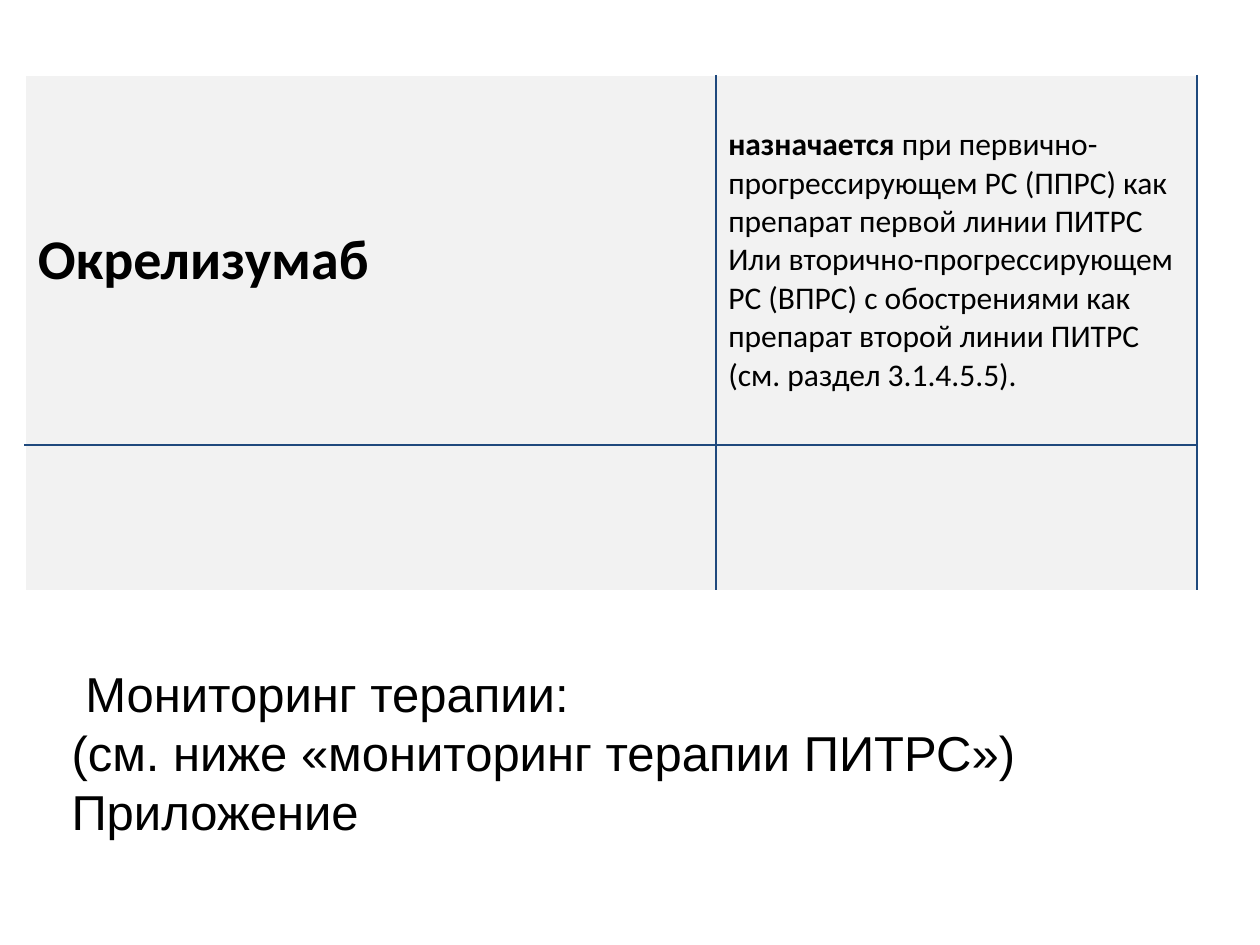
from dataclasses import dataclass, field
from typing import Any

from lxml.etree import SubElement
from pptx import Presentation
from pptx.dml.color import RGBColor as RGB
from pptx.enum.text import MSO_ANCHOR as Anchor, MSO_AUTO_SIZE as AutoSize
from pptx.oxml.ns import qn
from pptx.util import Inches, Pt

COLORS = {"text": "000000", "cell": "F2F2F2", "outer": "FFFFFF", "rule": "1F497D"}
WIDTHS = {"outer": 1, "rule": 1.5}


def add_text(paragraph, text, font="Calibri", size=18, bold=False, color="text"):
    """Add one formatted run, turning each newline into a line break."""
    for number, line in enumerate(text.split("\n")):
        if number:
            paragraph.add_line_break()
        run = paragraph.add_run()
        run.text = line
        run.font.name, run.font.size, run.font.bold = font, Pt(size), bold
        run.font.color.rgb = RGB.from_string(COLORS[color])


@dataclass
class SlideBuilder:
    """Holds the current slide and the style of its elements."""

    slide: Any
    colors: dict = field(default_factory=lambda: COLORS)

    def border(self, cell, side, kind):
        """Draw one side of a cell."""
        line = SubElement(cell._tc.get_or_add_tcPr(), qn(f"a:ln{side}"),
                          w=str(Pt(WIDTHS[kind])))
        fill = SubElement(line, qn("a:solidFill"))
        SubElement(fill, qn("a:srgbClr"), val=self.colors[kind])

    def table(self, left, top, widths, heights, contents):
        """Add a table whose cells hold paragraphs of (text, format) runs."""
        frame = self.slide.shapes.add_table(
            len(heights), len(widths), Inches(left), Inches(top),
            Inches(sum(widths)), Inches(sum(heights)))
        table = frame.table
        table.first_row = table.horz_banding = False
        for column, width in zip(table.columns, widths):
            column.width = Inches(width)
        for row, height in zip(table.rows, heights):
            row.height = Inches(height)
        for r, row in enumerate(contents):
            for c, paragraphs in enumerate(row):
                cell = table.cell(r, c)
                self.border(cell, "L", "rule" if c else "outer")
                self.border(cell, "R", "rule")
                self.border(cell, "T", "rule" if r else "outer")
                self.border(cell, "B", "outer" if r == len(heights) - 1 else "rule")
                cell.fill.solid()
                cell.fill.fore_color.rgb = RGB.from_string(self.colors["cell"])
                cell.vertical_anchor = Anchor.MIDDLE
                body = cell.text_frame
                for number, runs in enumerate(paragraphs):
                    paragraph = body.add_paragraph() if number else body.paragraphs[0]
                    for text, style in runs:
                        add_text(paragraph, text, **style)

    def textbox(self, left, top, width, height, text, indent=0, **style):
        """Add a wrapping text box with a first-line indent."""
        box = self.slide.shapes.add_textbox(
            Inches(left), Inches(top), Inches(width), Inches(height))
        body = box.text_frame
        body.word_wrap = True
        body.auto_size = AutoSize.SHAPE_TO_FIT_TEXT
        paragraph = body.paragraphs[0]
        paragraph._p.get_or_add_pPr().set("indent", str(Inches(indent)))
        add_text(paragraph, text, **style)


def main():
    """Build the treatment slide."""
    deck = Presentation()
    deck.slide_width, deck.slide_height = Inches(10), Inches(7.5)
    builder = SlideBuilder(deck.slides.add_slide(deck.slide_layouts[6]))

    drug = [[("Окрелизумаб", {"size": 32, "bold": True})]]
    indication = [
        [("назначается ", {"bold": True}),
         ("при первично-прогрессирующем РС (ППРС) как препарат первой линии ПИТРС", {})],
        [("Или вторично-прогрессирующем РС (ВПРС) с обострениями как препарат "
          "второй линии ПИТРС (см. раздел 3.1.4.5.5).", {})],
    ]
    builder.table(0.2, 0.6, [5.48, 3.82], [2.93, 1.16], [[drug, indication], [[], []]])
    builder.textbox(
        0.47, 5.22, 9.06, 1.51,
        "Мониторинг терапии:\n(см. ниже «мониторинг терапии ПИТРС») Приложение",
        indent=0.11, font="Arial", size=28)
    deck.save("out.pptx")


if __name__ == "__main__":
    main()
